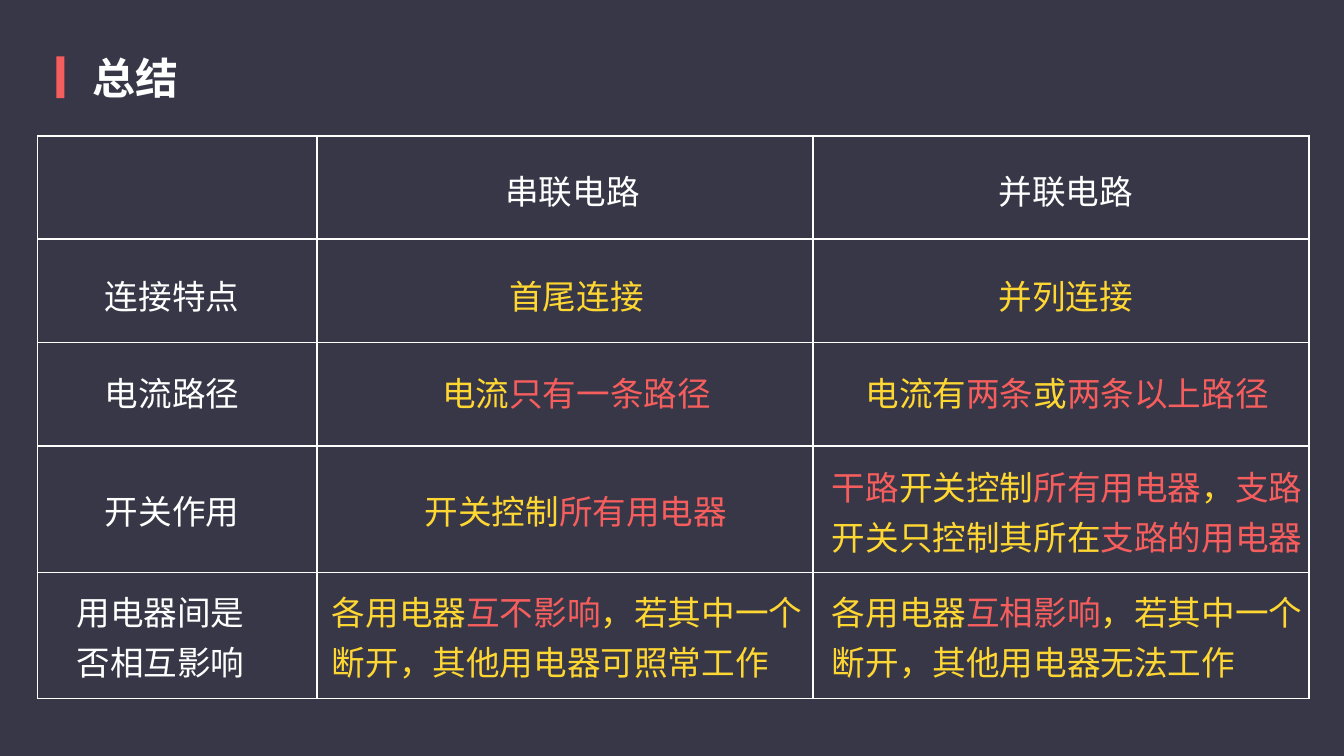
from dataclasses import dataclass

from lxml.etree import SubElement
from pptx import Presentation
from pptx.dml.color import RGBColor
from pptx.enum.shapes import MSO_SHAPE
from pptx.enum.text import MSO_AUTO_SIZE
from pptx.oxml.ns import qn
from pptx.util import Inches, Pt


@dataclass(frozen=True)
class Theme:
    background: str = "383747"
    white: str = "FFFFFF"
    yellow: str = "FFD732"
    red: str = "F65E5E"
    accent: str = "F65D5D"
    font: str = "Noto Sans CJK SC"
    title_size: int = 23
    body_size: int = 18


theme = Theme()
SLIDE_WIDTH = 10
RIGHT_EDGE = 9.99
LINE_HEIGHT = 0.45


def add_text(slide, left, top, width, height, text, colors, size=theme.body_size, bold=False):
    """Add a text box; the parts between | marks take the colors in turn."""
    shape = slide.shapes.add_textbox(Inches(left), Inches(top), Inches(width), Inches(height))
    frame = shape.text_frame
    frame.margin_left = frame.margin_right = frame.margin_top = frame.margin_bottom = 0
    frame.word_wrap = True
    frame.auto_size = MSO_AUTO_SIZE.SHAPE_TO_FIT_TEXT
    paragraph = frame.paragraphs[0]
    paragraph.line_spacing = 1.25
    paragraph.font.size = Pt(size)
    paragraph.font.bold = bold
    paragraph.font.name = theme.font
    defaults = paragraph._p.pPr.find(qn("a:defRPr"))
    SubElement(defaults, qn("a:ea")).set("typeface", theme.font)
    for index, part in enumerate(text.split("|")):
        if part:
            run = paragraph.add_run()
            run.text = part
            run.font.color.rgb = RGBColor.from_string(colors[index % len(colors)])


def add_borders(cell):
    properties = cell._tc.get_or_add_tcPr()
    for side in ("lnL", "lnR", "lnT", "lnB"):
        line = SubElement(properties, qn(f"a:{side}"))
        line.set("w", str(Pt(1)))
        fill = SubElement(line, qn("a:solidFill"))
        SubElement(fill, qn("a:srgbClr")).set("val", theme.white)


# Widescreen slide, 16:9
presentation = Presentation()
presentation.slide_width = Inches(SLIDE_WIDTH)
presentation.slide_height = Inches(SLIDE_WIDTH * 9 / 16)
slide = presentation.slides.add_slide(presentation.slide_layouts[6])
slide.background.fill.solid()
slide.background.fill.fore_color.rgb = RGBColor.from_string(theme.background)

# Title with its accent bar
bar = slide.shapes.add_shape(
    MSO_SHAPE.RECTANGLE, Inches(0.42), Inches(0.42), Inches(0.06), Inches(0.31)
)
bar.shadow.inherit = False
bar.fill.solid()
bar.fill.fore_color.rgb = RGBColor.from_string(theme.accent)
bar.line.fill.background()
add_text(slide, 0.69, 0.29, 9.3, 0.58, "总结", [theme.white], theme.title_size, True)

# Headings and row labels: left, top, text
labels = [
    (3.76, 1.2, "串联电路"),
    (7.43, 1.2, "并联电路"),
    (0.78, 1.98, "连接特点"),
    (0.78, 2.7, "电流路径"),
    (0.78, 3.58, "开关作用"),
]
for left, top, text in labels:
    add_text(slide, left, top, RIGHT_EDGE - left, LINE_HEIGHT, text, [theme.white])
add_text(slide, 0.57, 4.33, 1.43, 2 * LINE_HEIGHT, "用电器间是否相互影响", [theme.white])

# One-line answers, yellow with red key words
answers = [
    (3.79, 1.98, "首尾连接"),
    (7.43, 1.98, "并列连接"),
    (3.29, 2.7, "电流|只有一条路径"),
    (6.44, 2.7, "电流有|两条|或|两条以上路径"),
    (3.16, 3.58, "开关控制|所有用电器"),
]
for left, top, text in answers:
    add_text(slide, left, top, RIGHT_EDGE - left, LINE_HEIGHT, text, [theme.yellow, theme.red])

# Two-line answers: left, top, width, text
long_answers = [
    (6.19, 3.4, 3.52, "|干路|开关控制|所有用电器|，|支路|开关只控制其所在|支路的用电器"),
    (6.19, 4.33, 3.55, "各用电器|互相影响|，若其中一个断开，其他用电器无法工作"),
    (2.47, 4.33, 3.62, "各用电器|互不影响|，若其中一个断开，其他用电器可照常工作"),
]
for left, top, width, text in long_answers:
    add_text(slide, left, top, width, 2 * LINE_HEIGHT, text, [theme.yellow, theme.red])

# Table grid
column_widths = [2.08, 3.69, 3.69]
row_heights = [0.77, 0.77, 0.77, 0.94, 0.94]
table = slide.shapes.add_table(
    len(row_heights), len(column_widths), Inches(0.28), Inches(1.01),
    Inches(sum(column_widths)), Inches(sum(row_heights)),
).table
table.first_row = False
table.horz_banding = False
for column, width in zip(table.columns, column_widths):
    column.width = Inches(width)
for row, height in zip(table.rows, row_heights):
    row.height = Inches(height)
for cell in table.iter_cells():
    add_borders(cell)
    cell.fill.background()

presentation.save("out.pptx")
